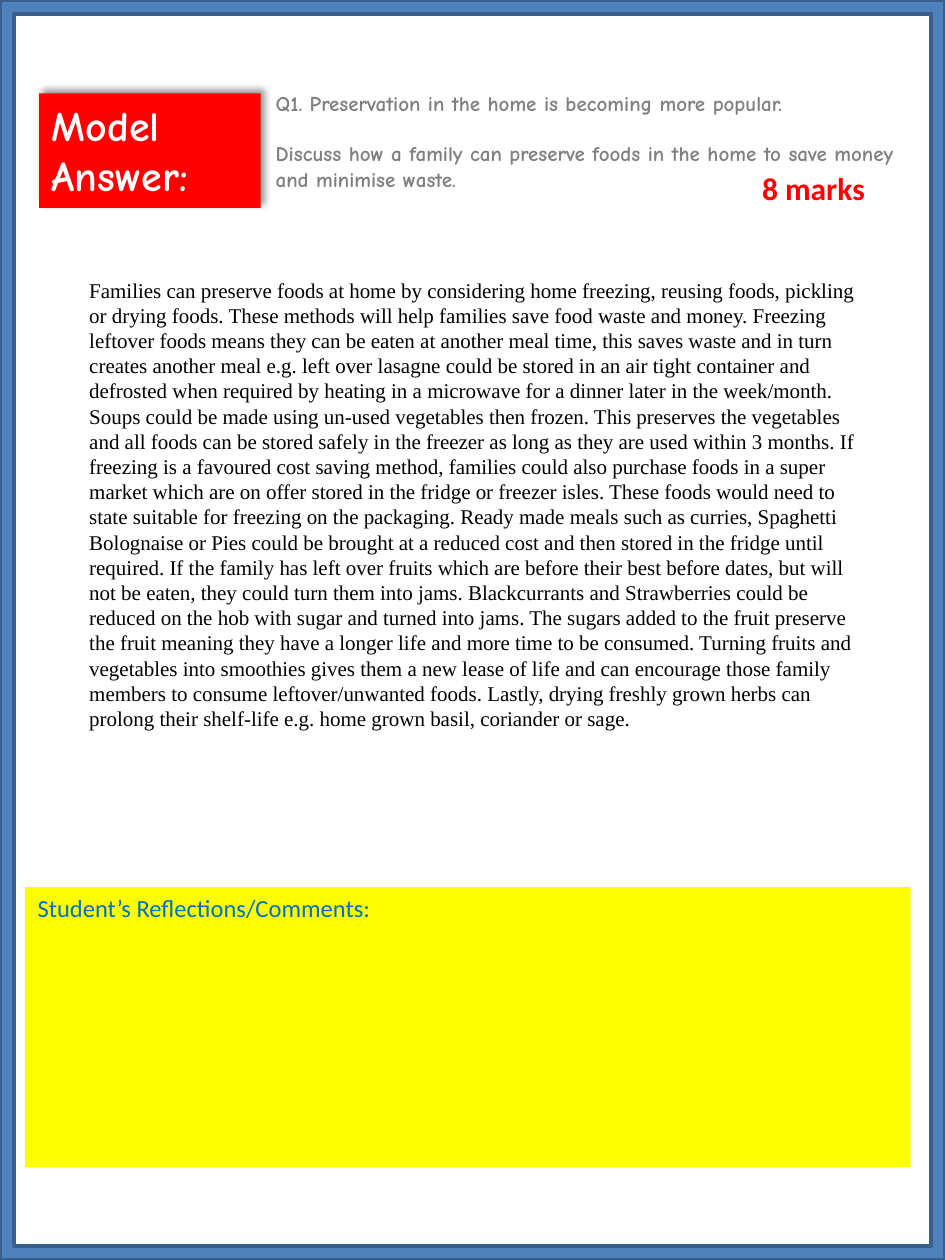
from dataclasses import dataclass

from lxml import etree
from pptx import Presentation
from pptx.dml.color import RGBColor as Rgb
from pptx.enum import shapes, text
from pptx.oxml import ns
from pptx.util import Pt


@dataclass(frozen=True)
class Theme:
    red: str = "FF0000"
    white: str = "FFFFFF"
    grey: str = "808080"
    black: str = "000000"
    yellow: str = "FFFF00"
    teal: str = "0070C0"
    blue: str = "4F81BD"
    navy: str = "3A5F8C"
    comic: str = "Comic Neue"
    sans: str = "Calibri"
    serif: str = "Times New Roman"
    head: int = 24
    mark: int = 18
    note: int = 14
    body: int = 12


LOOK = Theme()

TASK = [
    "Q1. Preservation in the home is becoming more popular.",
    "Discuss how a family can preserve foods in the home to save money and minimise waste.",
]

ANSWER = [
    "Families can preserve foods at home by considering home freezing, reusing foods, pickling or drying foods.",
    "These methods will help families save food waste and money.",
    "Freezing leftover foods means they can be eaten at another meal time, this saves waste and in turn creates "
    "another meal e.g. left over lasagne could be stored in an air tight container and defrosted when required "
    "by heating in a microwave for a dinner later in the week/month.",
    "Soups could be made using un-used vegetables then frozen.",
    "This preserves the vegetables and all foods can be stored safely in the freezer as long as they are used "
    "within 3 months.",
    "If freezing is a favoured cost saving method, families could also purchase foods in a super market which "
    "are on offer stored in the fridge or freezer isles.",
    "These foods would need to state suitable for freezing on the packaging.",
    "Ready made meals such as curries, Spaghetti Bolognaise or Pies could be brought at a reduced cost and then "
    "stored in the fridge until required.",
    "If the family has left over fruits which are before their best before dates, but will not be eaten, they "
    "could turn them into jams.",
    "Blackcurrants and Strawberries could be reduced on the hob with sugar and turned into jams.",
    "The sugars added to the fruit preserve the fruit meaning they have a longer life and more time to be consumed.",
    "Turning fruits and vegetables into smoothies gives them a new lease of life and can encourage those family "
    "members to consume leftover/unwanted foods.",
    "Lastly, drying freshly grown herbs can prolong their shelf-life e.g. home grown basil, coriander or sage.",
]


def place(shape, box):
    shape.left, shape.top, shape.width, shape.height = map(Pt, box)


def paint(shape, fill, line=None):
    shape.fill.solid()
    shape.fill.fore_color.rgb = Rgb.from_string(fill)
    if line:
        shape.line.color.rgb = Rgb.from_string(line)
        shape.line.width = Pt(2)
    else:
        shape.line.fill.background()
    shape.shadow.inherit = False


def cast(shape):
    glow = shape._element.spPr.find(ns.qn("a:effectLst"))
    outer = etree.SubElement(
        glow, ns.qn("a:outerShdw"), blurRad=str(Pt(4)), dist=str(Pt(3)),
        dir=str(315 * 60000), algn="bl", rotWithShape="0")
    tint = etree.SubElement(outer, ns.qn("a:srgbClr"), val=LOOK.black)
    etree.SubElement(tint, ns.qn("a:alpha"), val="40000")


def write(shape, lines, face, size, color, bold=False, gap=0):
    frame = shape.text_frame
    frame.word_wrap = True
    frame.auto_size = text.MSO_AUTO_SIZE.NONE
    frame.vertical_anchor = text.MSO_ANCHOR.TOP
    frame.text = "\n".join(lines)
    for rank, para in enumerate(frame.paragraphs):
        para.alignment = text.PP_ALIGN.LEFT
        para.space_before = Pt(gap if rank else 0)
        para.font.name = face
        para.font.size = Pt(size)
        para.font.bold = bold
        para.font.color.rgb = Rgb.from_string(color)


def add_head(slide, box, words):
    title = slide.shapes.title
    place(title, box)
    paint(title, LOOK.red)
    cast(title)
    write(title, [words], LOOK.comic, LOOK.head, LOOK.white, True)


def add_text(slide, box, lines, *style, **extra):
    label = slide.shapes.add_textbox(*map(Pt, box))
    write(label, lines, *style, **extra)


def add_panel(slide, box, words):
    panel = slide.shapes.add_shape(shapes.MSO_SHAPE.RECTANGLE, *map(Pt, box))
    paint(panel, LOOK.yellow)
    write(panel, [words], LOOK.sans, LOOK.note, LOOK.teal)


def add_border(slide, box):
    border = slide.shapes.add_shape(shapes.MSO_SHAPE.FRAME, *map(Pt, box))
    border.adjustments[0] = 0.015
    paint(border, LOOK.blue, LOOK.navy)


def main():
    deck = Presentation()
    wide, high = 540, 720
    deck.slide_width, deck.slide_height = Pt(wide), Pt(high)
    slide = deck.slides.add_slide(deck.slide_layouts[5])
    add_head(slide, (22.3, 53.3, 126.7, 65.5), "Model Answer:")
    add_text(slide, (150.5, 48.2, 372.2, 80), TASK,
             LOOK.comic, LOOK.body, LOOK.grey, True, gap=14.4)
    add_text(slide, (428.4, 92.9, 91.4, 28.8), ["8 marks"],
             LOOK.sans, LOOK.mark, LOOK.red, True)
    add_panel(slide, (14.4, 507, 506, 160), "Student’s Reflections/Comments:")
    add_border(slide, (0, 0, wide, high))
    add_text(slide, (43.9, 154.8, 452.9, 269.3), [" ".join(ANSWER)],
             LOOK.serif, LOOK.body, LOOK.black)
    deck.save("out.pptx")


if __name__ == "__main__":
    main()
